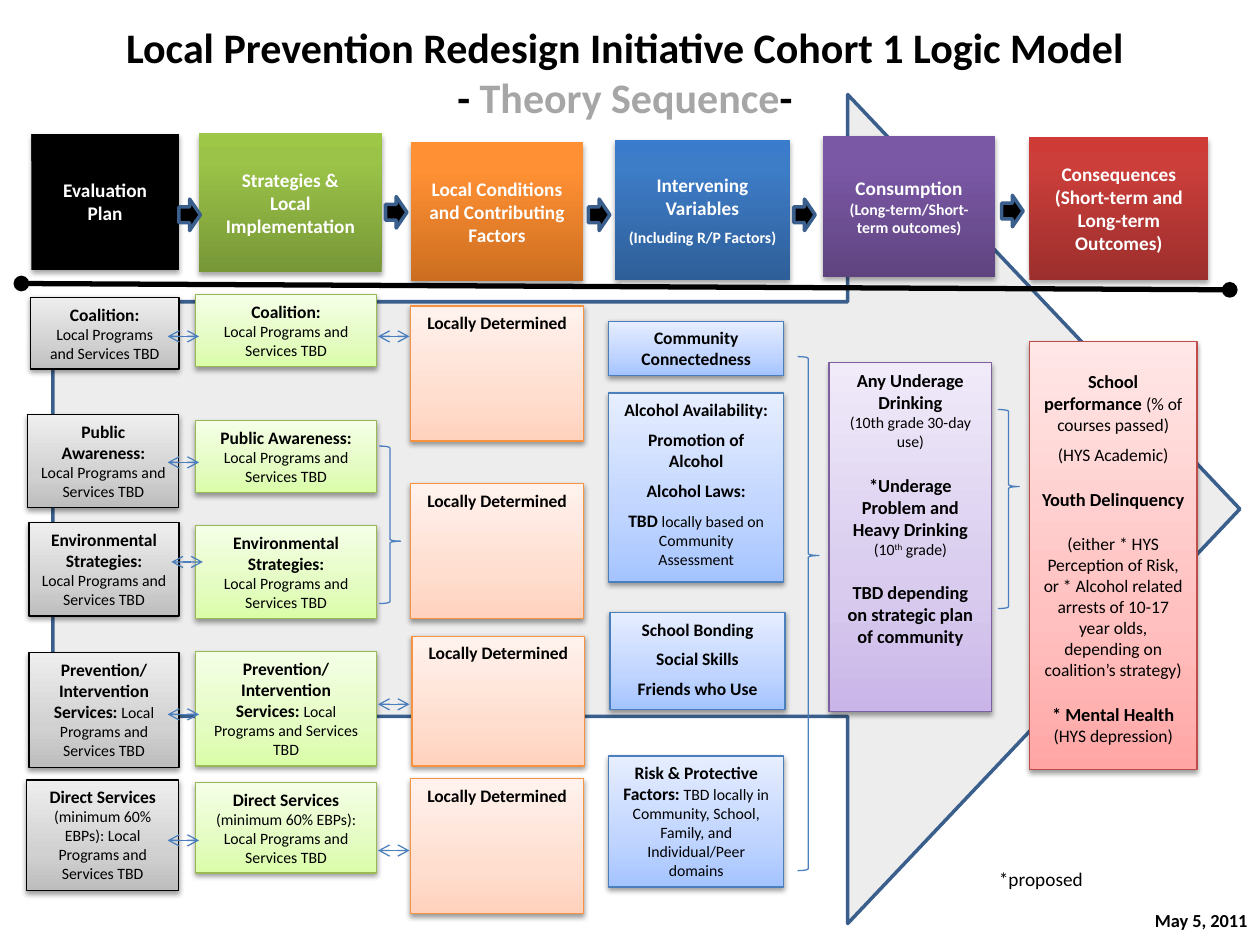
from lxml import etree
from pptx import Presentation
from pptx import util as u
from pptx.dml.color import RGBColor
from pptx.enum import shapes, text
from pptx.oxml import parse_xml
from pptx.oxml.ns import nsdecls, qn

PX = 9144  # 100 px to the inch
FONT = "Calibri"
COLOURS = {
    "black": "000000", "white": "FFFFFF", "grey": "A6A6A6", "pale": "D9D9D9",
    "navy": "3A5F8C", "blue": "4B7EBC",
}
# Gradient stops run from the bottom of a box to its top
HEADER_STOPS, BODY_STOPS = (0, 80, 100), (0, 35, 100)
HEADERS = {
    "black": ("000000", "000000", "000000"), "green": ("779737", "9BC348", "9DC746"),
    "orange": ("CC6E20", "FF9034", "FF9136"), "blue": ("2F5F99", "3D7CC7", "3A7CCB"),
    "purple": ("5F4480", "7B58A6", "7C57A8"), "red": ("9C2F2D", "CB3E3A", "CE3B37"),
}
BODIES = {
    "black": ("BDBDBD", "D1D1D1", "EEEEEE"), "green": ("DAFDA7", "E4FCC2", "F5FFE7"),
    "orange": ("FFD2BD", "FFDED0", "FFF2ED"), "blue": ("A4C4FF", "BFD4FF", "E6EEFF"),
    "purple": ("C9B5E8", "D8CBEE", "F0EAF9"), "red": ("FFA6A5", "FFC0BF", "FFE7E7"),
}
EDGES = {"black": "000000", "green": "98B955", "orange": "F69240",
         "blue": "4B7EBC", "purple": "7D60A0", "red": "BF4C48"}


def rgb(value):
    return RGBColor.from_string(COLOURS.get(value, value))


class Board:
    def __init__(self, slide):
        self.slide = slide

    def add_words(self, frame, paras, colour="black", align="CENTER", anchor="TOP"):
        """Each para is (space before, runs); each run is (text, size, bold[, colour])."""
        frame.word_wrap = True
        frame.auto_size = text.MSO_AUTO_SIZE.NONE
        frame.vertical_anchor = text.MSO_ANCHOR[anchor]
        for index, (before, runs) in enumerate(paras):
            para = frame.add_paragraph() if index else frame.paragraphs[0]
            para.alignment = text.PP_ALIGN[align]
            para.space_before = u.Pt(before)
            for words, size, bold, *tint in runs:
                if words == "\n":
                    para.add_line_break()
                    continue
                span = para.add_run()
                span.text = words
                span.font.name, span.font.size, span.font.bold = FONT, u.Pt(size), bold
                span.font.color.rgb = rgb(tint[0] if tint else colour)

    def title(self, place, paras):
        holder = self.slide.shapes.title
        holder.left, holder.top, holder.width, holder.height = (v * PX for v in place)
        self.add_words(holder.text_frame, paras)

    def label(self, place, run, align, anchor):
        box = self.slide.shapes.add_textbox(*(v * PX for v in place))
        self.add_words(box.text_frame, [(0, [run])], align=align, anchor=anchor)

    def shape(self, kind, place, line=None, width=0.75, fill=None, adjust=()):
        shape = self.slide.shapes.add_shape(shapes.MSO_SHAPE[kind], *(v * PX for v in place))
        shape.shadow.inherit = False
        for index, value in enumerate(adjust):
            shape.adjustments[index] = value
        if fill:
            shape.fill.solid()
            shape.fill.fore_color.rgb = rgb(fill)
        else:
            shape.fill.background()
        if line:
            shape.line.color.rgb = rgb(line)
            shape.line.width = u.Pt(width)
        else:
            shape.line.fill.background()
        return shape

    def panel(self, place, paras, colours, stops, line, shadow, colour, anchor):
        box = self.shape("RECTANGLE", place, line)
        props = box._element.spPr
        marks = "".join(f'<a:gs pos="{stop * 1000}"><a:srgbClr val="{tone}"/></a:gs>'
                        for stop, tone in zip(stops, colours))
        props.replace(props.find(qn("a:noFill")), parse_xml(
            f'<a:gradFill {nsdecls("a")} rotWithShape="1"><a:gsLst>{marks}</a:gsLst>'
            '<a:lin ang="16200000" scaled="0"/></a:gradFill>'))
        alpha, distance = shadow
        props.find(qn("a:effectLst")).append(parse_xml(
            f'<a:outerShdw {nsdecls("a")} blurRad="{u.Pt(3.1)}" dist="{u.Pt(distance)}" '
            'dir="5400000" rotWithShape="0"><a:srgbClr val="000000">'
            f'<a:alpha val="{alpha * 1000}"/></a:srgbClr></a:outerShdw>'))
        self.add_words(box.text_frame, paras, colour, anchor=anchor)
        return box

    def header(self, place, tone, paras):
        return self.panel(place, paras, HEADERS[tone], HEADER_STOPS, None,
                          (35, 1.8), "white", "MIDDLE")

    def body(self, place, tone, paras):
        return self.panel(place, paras, BODIES[tone], BODY_STOPS, EDGES[tone],
                          (38, 1.6), "black", "TOP")

    def line(self, start, end, colour, width, tip):
        link = self.slide.shapes.add_connector(
            shapes.MSO_CONNECTOR.STRAIGHT, *(v * PX for v in start + end))
        link.line.color.rgb = rgb(colour)
        link.line.width = u.Pt(width)
        props = link._element.spPr
        for end_name in ("headEnd", "tailEnd"):
            etree.SubElement(props.find(qn("a:ln")), qn(f"a:{end_name}"), type=tip)
        etree.SubElement(props, qn("a:effectLst"))


def main():
    deck = Presentation()
    deck.slide_width, deck.slide_height = 1000 * PX, 750 * PX
    page = deck.slides.add_slide(deck.slide_layouts[5])
    board = Board(page)

    # Large arrow behind everything
    back = board.shape("RIGHT_ARROW", (42, 75, 942, 658), "navy", 2, "pale", (0.5, 0.473))
    tone = back._element.spPr.find(qn("a:solidFill"))[0]
    etree.SubElement(tone, qn("a:alpha"), val="45000")

    # Title and labels
    board.title((50, 12, 892, 91), [
        (0, [("Local Prevention Redesign Initiative Cohort 1 Logic Model", 24, True)]),
        (0, [(" - ", 24, True), ("Theory Sequence", 24, True, "grey"), ("- ", 24, True)])])
    board.label((767, 710, 233, 40), ("May 5, 2011", 10.5, True), "RIGHT", "MIDDLE")
    board.label((783, 683, 133, 29), ("*proposed", 11, False), "LEFT", "TOP")

    # Column headers
    headers = [
        ((25, 106, 117, 108), "black", [(0, "Evaluation Plan", 11)]),
        ((158, 106, 145, 110), "green",
         [(0, "Strategies &", 11), (0, "Local Implementation", 11)]),
        ((326, 113, 137, 110), "orange", [(0, "Local Conditions and Contributing Factors", 11)]),
        ((488, 111, 139, 111), "blue",
         [(0, "Intervening Variables", 11), (5, "(Including R/P Factors)", 9)]),
        ((653, 108, 137, 112), "purple",
         [(0, "Consumption", 11), (0, "(Long-term/Short-term outcomes)", 9)]),
        ((817, 109, 142, 113), "red",
         [(0, "Consequences (Short-term and Long-term Outcomes)", 11)]),
    ]
    for place, tone, lines in headers:
        board.header(place, tone, [(gap, [(words, size, True)]) for gap, words, size in lines])
    for left, top in ((142, 158), (306, 156), (467, 158), (630, 158), (795, 155)):
        board.shape("RIGHT_ARROW", (left, top, 17, 25), "navy", 2, "black")
    board.line((17, 225), (976, 230), "black", 3, "oval")

    # Evaluation and strategy columns: the same wording in both
    programs = "Local Programs and Services TBD"
    strategies = [
        ((24, 236, 118, 57), (234, 57), "Coalition:", programs),
        ((22, 329, 120, 74), (334, 57), "Public Awareness:", programs),
        ((23, 415, 119, 74), (417, 74), "Environmental Strategies:", programs),
        ((23, 518, 119, 91), (517, 91), "Prevention/ Intervention Services: ", programs),
        ((21, 619, 121, 88), (621, 72), "Direct Services", "(minimum 60% EBPs): " + programs),
    ]
    for grey_place, (top, height), name, detail in strategies:
        bold, plain = (name, 10, True), (detail, 9, False)
        inline = name.endswith(" ")
        paras = [(0, [bold, plain])] if inline else [(0, [bold]), (0, [plain])]
        board.body(grey_place, "black", paras)
        board.body((155, top, 144, height), "green", paras)

    # Local conditions
    for left, top, height in ((326, 243, 107), (326, 384, 107), (327, 505, 103), (326, 618, 107)):
        board.body((left, top, 137, height), "orange", [(0, [("Locally Determined", 10, True)])])

    # Intervening variables
    variables = [
        (483, 255, 43, [[("Community Connectedness", 10, True)]]),
        (483, 312, 150, [
            [("Alcohol Availability:", 10, True)], [("Promotion of Alcohol", 10, True)],
            [("Alcohol Laws:", 10, True)],
            [("TBD ", 10, True), ("locally based on Community Assessment", 9, False)]]),
        (484, 486, 77, [[(words, 10, True)] for words in
                        ("School Bonding", "Social Skills", "Friends who Use")]),
        (483, 600, 104, [[
            ("Risk & Protective Factors: ", 10, True),
            ("TBD locally in Community, School, Family, and Individual/Peer domains", 9, False)]]),
    ]
    for left, top, height, lines in variables:
        board.body((left, top, 139, height), "blue", [(5, runs) for runs in lines])

    # Consumption
    drinking = board.body((658, 288, 129, 277), "purple", [
        (0, [("Any Underage Drinking", 10.5, True)]),
        (0, [("(10th grade 30-day use)", 9, False)]),
        (13, [("*Underage", 10.5, True), ("\n", 10.5, True),
              ("Problem and Heavy Drinking", 10.5, True)]),
        (0, [("(10", 9, False), ("th", 9, False), (" grade)", 9, False)]),
        (13, [("TBD depending on strategic plan of community", 10.5, True)])])
    ordinal = drinking.text_frame.paragraphs[3].runs[1]
    ordinal._r.get_or_add_rPr().set("baseline", "30000")

    # Consequences
    outcomes = board.body((817, 271, 133, 340), "red", [
        (0, [("School performance ", 10.5, True), ("(% of courses passed)", 10, False)]),
        (5, [("(HYS Academic)", 10, False)]),
        (13, [("Youth Delinquency", 10.5, True)]),
        (13, [("(either * HYS Perception of Risk, or * Alcohol related arrests of 10-17 "
               "year olds, depending on coalition’s strategy)", 10, False)]),
        (13, [("* Mental Health", 10.5, True)]),
        (0, [("(HYS depression)", 10, False)])])
    outcomes.text_frame.margin_top = 23 * PX

    # Braces and two-way links between columns
    for place, middle in (((301, 354, 17, 125), 0.604), ((633, 283, 17, 408), 0.387),
                          ((792, 325, 17, 158), 0.387)):
        board.shape("RIGHT_BRACE", place, "blue", adjust=(0.083, middle))
    for right, height in ((325, 267), (325, 559), (325, 675), (158, 267), (158, 367),
                          (161, 446), (158, 567), (158, 667)):
        board.line((right, height), (right - 25, height), "blue", 0.75, "arrow")

    deck.save("out.pptx")


if __name__ == "__main__":
    main()
